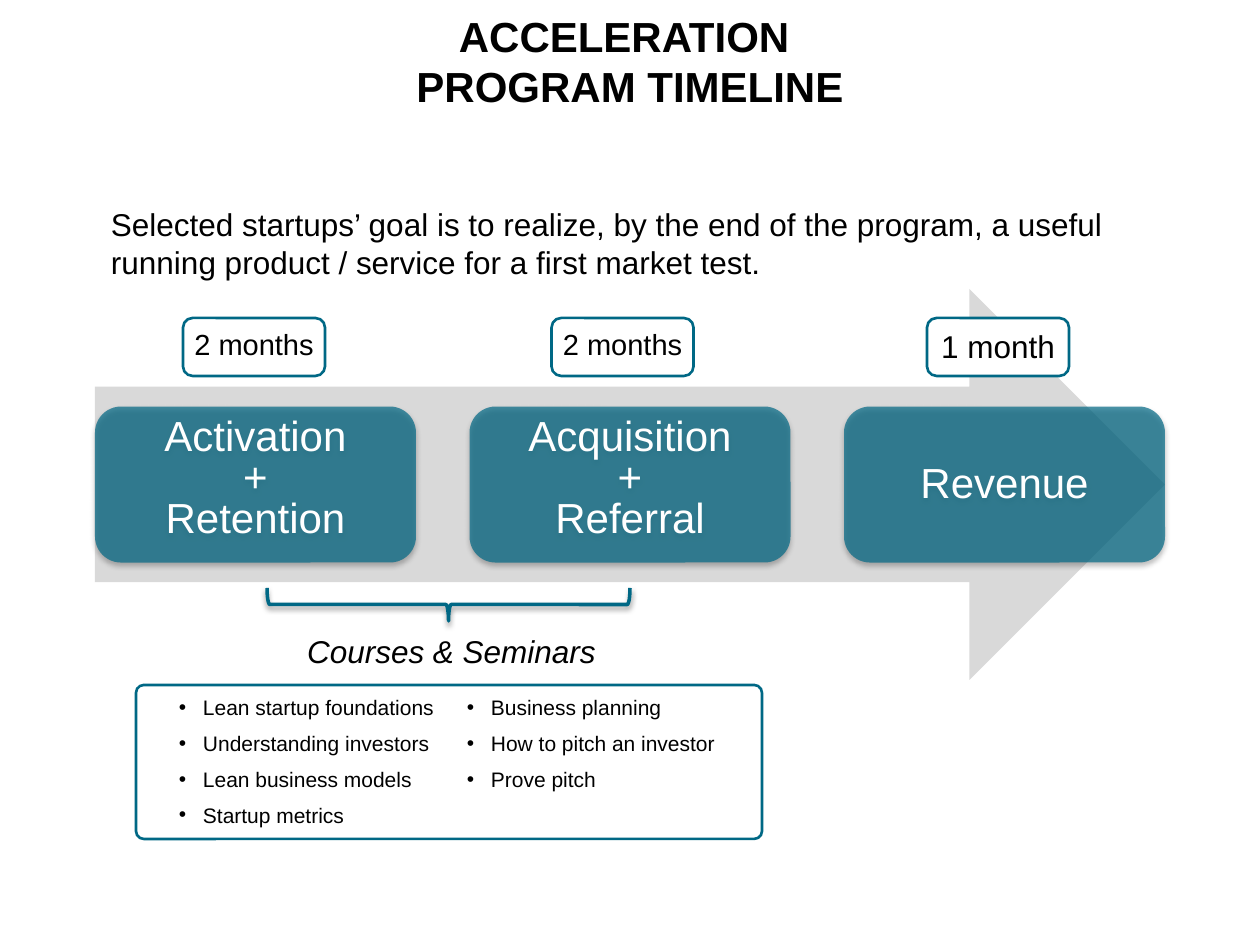
import pptx
import pptx.dml.color
import pptx.enum.shapes
import pptx.enum.text
import pptx.oxml
import pptx.oxml.ns
import pptx.util

SCALE = 914400 / 126
TEAL, GREY, WHITE, BLACK = "006885", "D9D9D9", "FFFFFF", "000000"
SHAPES = pptx.enum.shapes.MSO_SHAPE
ANCHORS = pptx.enum.text.MSO_ANCHOR
ALIGNS = pptx.enum.text.PP_ALIGN

STEPS = [
    (["Activation", "+", "Retention"], "2 months", 16.6, 88),
    (["Acquisition", "+", "Referral"], "2 months", 16.6, 82),
    (["Revenue"], "1 month", 18, 83),
]
COURSES = [
    ["Lean startup foundations", "Understanding investors",
     "Lean business models", "Startup metrics"],
    ["Business planning", "How to pitch an investor", "Prove pitch"],
]


def px(length):
    return pptx.util.Emu(round(length * SCALE))


def color(value):
    return pptx.dml.color.RGBColor.from_string(value)


def element(xml):
    return pptx.oxml.parse_xml(
        xml.replace(" ", f" {pptx.oxml.ns.nsdecls('a')} ", 1))


def add_shape(page, kind, box, fill=None, line=None, line_width=1.5):
    shape = page.shapes.add_shape(kind, *map(px, box))
    shape.shadow.inherit = False
    if fill:
        shape.fill.solid()
        shape.fill.fore_color.rgb = color(fill)
    else:
        shape.fill.background()
    if line:
        shape.line.color.rgb = color(line)
        shape.line.width = pptx.util.Pt(line_width)
    else:
        shape.line.fill.background()
    return shape


def add_shadow(shape, opacity):
    effects = shape._element.spPr.find(pptx.oxml.ns.qn("a:effectLst"))
    effects.append(element(
        '<a:outerShdw blurRad="39400" dist="22900" dir="5400000" rotWithShape="0">'
        f'<a:srgbClr val="000000"><a:alpha val="{opacity * 1000}"/></a:srgbClr>'
        '</a:outerShdw>'))


def set_fill_opacity(shape, opacity):
    fill = shape._element.spPr.find(pptx.oxml.ns.qn("a:solidFill"))
    fill[0].append(element(f'<a:alpha val="{opacity * 1000}"/>'))


def write(shape, lines, size, ink=BLACK, align=ALIGNS.CENTER, anchor=ANCHORS.MIDDLE,
          insets=(13, 13, 13, 13), spacing=None, before=0, after=0,
          bold=False, italic=False, bullet=False):
    frame = shape.text_frame
    frame.word_wrap = True
    frame.auto_size = pptx.enum.text.MSO_AUTO_SIZE.NONE
    frame.vertical_anchor = anchor
    (frame.margin_left, frame.margin_top,
     frame.margin_right, frame.margin_bottom) = map(px, insets)
    for index, line in enumerate(lines):
        para = frame.add_paragraph() if index else frame.paragraphs[0]
        para.text = line
        para.alignment = align
        para.line_spacing = spacing
        para.space_before = pptx.util.Pt(before if index else 0)
        para.space_after = pptx.util.Pt(after)
        if bullet:
            properties = para._p.get_or_add_pPr()
            properties.set("marL", str(px(60)))
            properties.set("indent", str(px(-24)))
            properties.append(element('<a:buFont typeface="Arial"/>'))
            properties.append(element('<a:buChar char="•"/>'))
        para.font.name = "Arial"
        para.font.size = pptx.util.Pt(size)
        para.font.bold = bold
        para.font.italic = italic
        para.font.color.rgb = color(ink)


def add_text(page, box, lines, size, **options):
    write(page.shapes.add_textbox(*map(px, box)), lines, size, **options)


def add_title(page, box):
    title = page.shapes.title
    title.left, title.top, title.width, title.height = map(px, box)
    write(title, ["ACCELERATION \vPROGRAM TIMELINE"], 24, bold=True,
          insets=(13, 6, 13, 6))


def add_timeline(page, box):
    left, top, width, height = box
    add_shape(page, SHAPES.RIGHT_ARROW, box, GREY)
    card_width, card_height = 321, 156
    pitch = (width - card_width) / (len(STEPS) - 1)
    for index, (lines, duration, size, badge_offset) in enumerate(STEPS):
        card_left = left + index * pitch
        card = add_shape(page, SHAPES.ROUNDED_RECTANGLE,
                         (card_left, top + (height - card_height) / 2,
                          card_width, card_height), TEAL)
        set_fill_opacity(card, 70)
        add_shadow(card, 35)
        write(card, lines, 24, WHITE, spacing=0.5 if len(lines) > 1 else 0.9, after=9)
        badge = add_shape(page, SHAPES.ROUNDED_RECTANGLE,
                          (card_left + badge_offset, top + 29, 142, 58), WHITE, TEAL)
        write(badge, [duration], size, anchor=ANCHORS.TOP, insets=(5, 6, 5, 0))


def add_courses(page, box):
    left, top, width, height = box
    brace_width, brace_height = 33, 363
    brace = add_shape(page, SHAPES.RIGHT_BRACE,
                      (left + 296, top - 262, brace_width, brace_height),
                      line=TEAL, line_width=2)
    brace.rotation = 90
    add_shadow(brace, 38)
    add_text(page, (left + 134, top - 68, 363, 81), ["Courses & Seminars"], 18,
             italic=True, spacing=0.5, after=6)
    frame = add_shape(page, SHAPES.ROUNDED_RECTANGLE, box, WHITE, TEAL)
    frame.adjustments[0] = 0.05
    for index, names in enumerate(COURSES):
        add_text(page, (left - 6 + index * 288, top + 4, 379, height - 8), names, 12,
                 align=ALIGNS.LEFT, anchor=ANCHORS.TOP, insets=(13, 6, 13, 6),
                 before=3, after=3, bullet=True)


def main():
    deck = pptx.Presentation()
    deck.slide_width, deck.slide_height = px(1260), px(945)
    page = deck.slides.add_slide(deck.slide_layouts[5])
    add_title(page, (0, 0, 1260, 122))
    add_timeline(page, (95, 289, 1070, 391))
    add_courses(page, (136, 685, 626, 154))
    add_text(page, (98, 199, 1070, 89),
             ["Selected startups’ goal is to realize, by the end of the program, "
              "a useful running product / service for a first market test."],
             18, align=ALIGNS.LEFT, anchor=ANCHORS.TOP, insets=(13, 6, 13, 6), after=6)
    deck.save("out.pptx")


if __name__ == "__main__":
    main()
